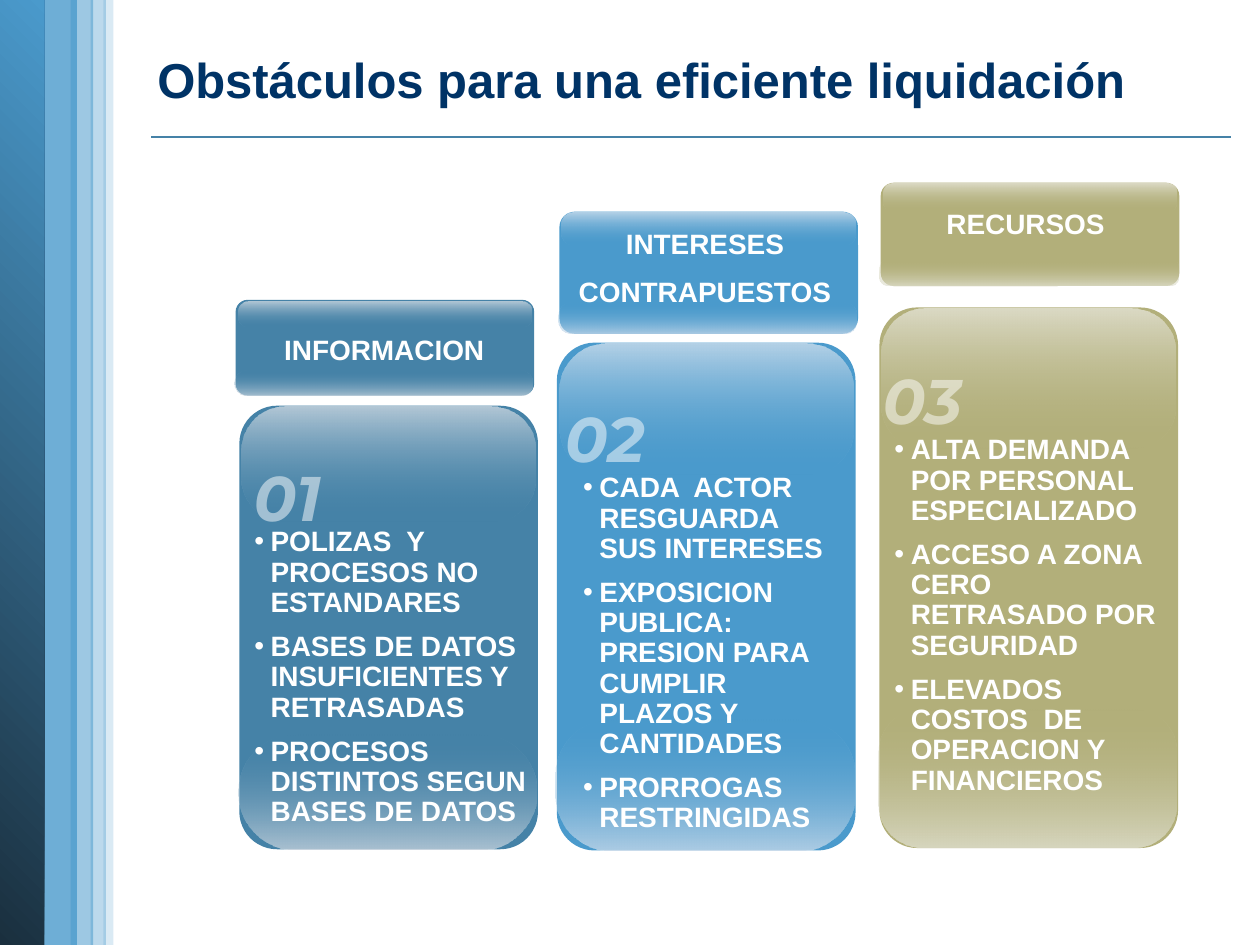
"""Build the slide on obstacles to an efficient claims settlement."""
from dataclasses import dataclass
from typing import Any, Optional

from lxml import etree
from pptx import Presentation
from pptx import util as u
from pptx.dml.color import RGBColor
from pptx.enum import lang, shapes, text
from pptx.oxml.ns import qn


@dataclass(frozen=True)
class Theme:
    sky: str = "4A9ACC"
    steel: str = "4582A7"
    olive: str = "B2AF7A"
    deep: str = "1A2F3E"
    navy: str = "003366"
    white: str = "FFFFFF"
    body_font: str = "Arial"
    number_font: str = "Montserrat"
    title_size: int = 28
    number_size: int = 36
    body_size: int = 16
    gloss_opacity: int = 75


@dataclass(frozen=True)
class Box:
    left: float
    top: float
    width: float
    height: float

    def lengths(self) -> list[u.Length]:
        return [u.Inches(v) for v in (self.left, self.top, self.width, self.height)]


@dataclass(frozen=True)
class Stripe:
    box: Box
    opacity: int


@dataclass(frozen=True)
class Stop:
    color: str
    opacity: int = 100


@dataclass(frozen=True)
class Finish:
    base: str
    top_light: str
    bottom_light: str
    top_round: float
    bottom_round: float


@dataclass(frozen=True)
class Column:
    finish: Finish
    header: Box
    card: Box
    heading: list[str]
    heading_box: Box
    number: str
    number_box: Box
    points: list[str]
    points_box: Box


THEME = Theme()
CARD_ROUND = 0.126
GLOSS_SHARE = 0.258
BODY = {"name": THEME.body_font, "size": u.Pt(THEME.body_size), "bold": True}
TITLE = {**BODY, "size": u.Pt(THEME.title_size)}
NUMBER = {"name": THEME.number_font, "size": u.Pt(THEME.number_size), "bold": True,
          "italic": True, "language_id": lang.MSO_LANGUAGE_ID.ENGLISH_US}
CENTRED = {"alignment": text.PP_ALIGN.CENTER}

EDGE = Box(-0.01, 0, 0.36, 7.5)
WIDE_STRIPE = Stripe(Box(0.3, 0, 0.31, 7.53), 80)
STRIPES = [
    Stripe(Box(0.82, -0.02, 0.08, 7.52), 20),
    Stripe(Box(0.56, 0, 0.18, 7.51), 54),
    Stripe(Box(0.72, 0, 0.12, 7.52), 37),
]

COLUMNS = [
    Column(
        Finish(THEME.steel, "D8DFE6", "CDD7E0", 0.387, 0.498),
        Box(1.87, 2.38, 2.37, 0.76), Box(1.9, 3.22, 2.37, 3.52),
        ["INFORMACION"], Box(1.93, 2.59, 2.24, 0.37),
        "01", Box(1.78, 3.59, 1, 0.47),
        ["POLIZAS  Y PROCESOS NO ESTANDARES",
         "BASES DE DATOS INSUFICIENTES Y RETRASADAS",
         "PROCESOS DISTINTOS SEGUN BASES DE DATOS"],
        Box(1.92, 4.14, 2.37, 2.93)),
    Column(
        Finish(THEME.sky, "D8E4F0", "CEDDEC", 0.359, 0.426),
        Box(4.44, 1.68, 2.37, 0.97), Box(4.42, 2.72, 2.37, 4.03),
        ["INTERESES", "CONTRAPUESTOS"], Box(4.48, 1.75, 2.23, 0.77),
        "02", Box(4.3, 3.12, 1, 0.47),
        ["CADA  ACTOR RESGUARDA SUS INTERESES",
         "EXPOSICION PUBLICA: PRESION PARA CUMPLIR PLAZOS Y CANTIDADES",
         "PRORROGAS RESTRINGIDAS"],
        Box(4.53, 3.71, 2.14, 3.41)),
    Column(
        Finish(THEME.olive, "E9E8DE", "E3E3D5", 0.313, 0.321),
        Box(6.99, 1.45, 2.37, 0.82), Box(6.98, 2.44, 2.37, 4.29),
        ["RECURSOS"], Box(7.26, 1.59, 1.76, 0.37),
        "03", Box(6.82, 2.82, 1, 0.47),
        ["ALTA DEMANDA POR PERSONAL ESPECIALIZADO",
         "ACCESO A ZONA CERO RETRASADO POR SEGURIDAD",
         "ELEVADOS COSTOS  DE OPERACION Y FINANCIEROS"],
        Box(7, 3.41, 2.31, 3.04)),
]


def apply(target: Any, formats: dict[str, Any]) -> None:
    for name, value in formats.items():
        setattr(target, name, value)


def set_opacity(element: Any, opacities: list[int]) -> None:
    for color, opacity in zip(element.iter(qn("a:srgbClr")), opacities):
        if opacity < 100:
            etree.SubElement(color, qn("a:alpha")).set("val", str(opacity * 1000))


def add_panel(slide: Any, box: Box, stops: list[Stop], angle: int = 270,
              rounding: Optional[float] = None) -> None:
    preset = shapes.MSO_SHAPE
    kind = preset.RECTANGLE if rounding is None else preset.ROUNDED_RECTANGLE
    panel = slide.shapes.add_shape(kind, *box.lengths())
    panel.shadow.inherit = False
    panel.line.fill.background()
    if rounding is not None:
        panel.adjustments[0] = rounding
    if len(stops) == 1:
        panel.fill.solid()
        panel.fill.fore_color.rgb = RGBColor.from_string(stops[0].color)
    else:
        panel.fill.gradient()
        panel.fill.gradient_angle = angle
        for position, (target, stop) in enumerate(zip(panel.fill.gradient_stops, stops)):
            target.color.rgb = RGBColor.from_string(stop.color)
            target.position = position
    set_opacity(panel._element.spPr, [stop.opacity for stop in stops])


def add_glossy_panel(slide: Any, box: Box, finish: Finish) -> None:
    gloss = round(box.height * GLOSS_SHARE, 2)
    bottom = Box(box.left - 0.01, box.top + box.height - gloss, box.width, gloss)
    top = Box(box.left + 0.02, box.top + 0.01, box.width - 0.04, gloss)
    clear = Stop(finish.base, 0)
    top_light = Stop(finish.top_light, THEME.gloss_opacity)
    bottom_light = Stop(finish.bottom_light, THEME.gloss_opacity)
    add_panel(slide, box, [Stop(finish.base)], rounding=CARD_ROUND)
    add_panel(slide, bottom, [clear, bottom_light], rounding=finish.bottom_round)
    add_panel(slide, top, [top_light, clear], rounding=finish.top_round)


def add_text(slide: Any, box: Box, lines: list[str], font: dict[str, Any],
             layout: dict[str, Any], color: str = THEME.white, opacity: int = 100,
             bullets: bool = False, anchor: Any = text.MSO_ANCHOR.TOP) -> None:
    frame = slide.shapes.add_textbox(*box.lengths()).text_frame
    apply(frame, {"word_wrap": True, "vertical_anchor": anchor})
    for index, line in enumerate(lines):
        paragraph = frame.add_paragraph() if index else frame.paragraphs[0]
        if bullets:
            properties = paragraph._p.get_or_add_pPr()
            properties.set("marL", str(u.Inches(0.13)))
            properties.set("indent", str(u.Inches(-0.13)))
            etree.SubElement(properties, qn("a:buFont")).set("typeface", THEME.body_font)
            etree.SubElement(properties, qn("a:buChar")).set("char", "•")
        apply(paragraph, layout)
        if index:
            paragraph.space_before = u.Pt(THEME.body_size / 2)
        run = paragraph.add_run()
        run.text = line
        apply(run.font, font)
        run.font.color.rgb = RGBColor.from_string(color)
        set_opacity(run._r, [opacity])


def add_rule(slide: Any) -> None:
    rule = slide.shapes.add_connector(
        shapes.MSO_CONNECTOR.STRAIGHT, *[u.Inches(v) for v in (1.2, 1.09, 9.77, 1.09)])
    rule.line.color.rgb = RGBColor.from_string(THEME.steel)
    rule.line.width = u.Pt(1)
    etree.SubElement(rule._element.spPr, qn("a:effectLst"))


def add_stripe(slide: Any, stripe: Stripe) -> None:
    add_panel(slide, stripe.box, [Stop(THEME.sky, stripe.opacity)])


def main() -> None:
    deck = Presentation()
    apply(deck, {"slide_width": u.Inches(10), "slide_height": u.Inches(7.5)})
    slide = deck.slides.add_slide(deck.slide_layouts[6])
    add_rule(slide)
    add_stripe(slide, WIDE_STRIPE)
    add_panel(slide, EDGE, [Stop(THEME.deep), Stop(THEME.sky)], angle=45)
    for stripe in STRIPES:
        add_stripe(slide, stripe)
    for column in COLUMNS:
        add_glossy_panel(slide, column.header, column.finish)
        add_glossy_panel(slide, column.card, column.finish)
        add_text(slide, column.number_box, [column.number], NUMBER, CENTRED, opacity=50)
        add_text(slide, column.points_box, column.points, BODY, {"line_spacing": 0.9},
                 bullets=True)
        add_text(slide, column.heading_box, column.heading, BODY, CENTRED)
    add_text(slide, Box(1.15, 0.07, 8.7, 1.11), ["Obstáculos para una eficiente liquidación"],
             TITLE, {}, color=THEME.navy, anchor=text.MSO_ANCHOR.MIDDLE)
    deck.save("out.pptx")


if __name__ == "__main__":
    main()
